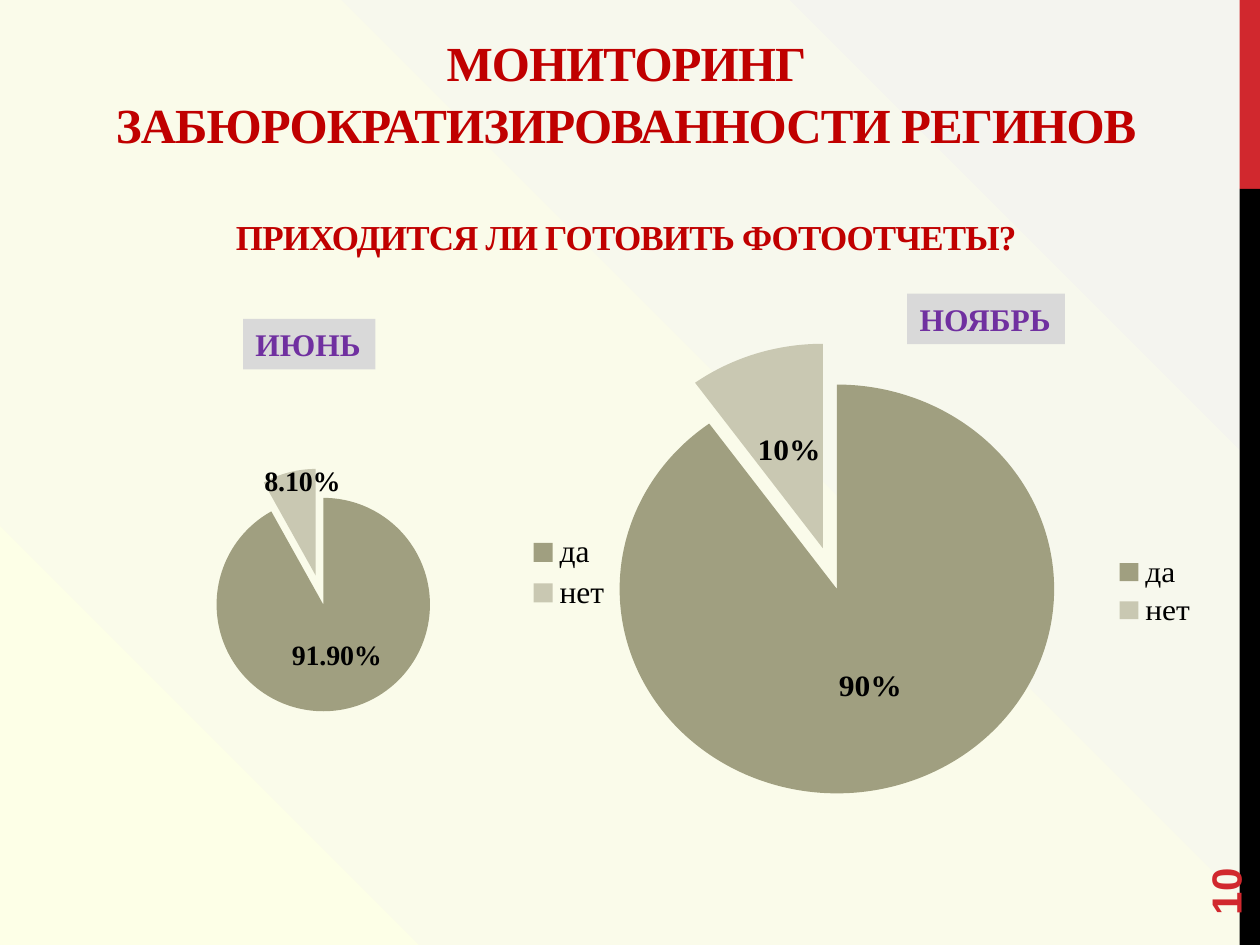
from dataclasses import dataclass

from lxml import etree
from pptx import Presentation
from pptx.chart.data import CategoryChartData
from pptx.dml.color import RGBColor
from pptx.enum.chart import XL_CHART_TYPE, XL_LABEL_POSITION, XL_LEGEND_POSITION
from pptx.enum.shapes import MSO_SHAPE
from pptx.enum.text import MSO_ANCHOR, PP_ALIGN
from pptx.oxml import parse_xml
from pptx.oxml.ns import nsdecls, qn
from pptx.util import Cm, Pt

PIE = XL_CHART_TYPE.PIE
LABEL_CENTER = XL_LABEL_POSITION.CENTER
LEGEND_RIGHT = XL_LEGEND_POSITION.RIGHT
RECTANGLE = MSO_SHAPE.RECTANGLE
MIDDLE, BOTTOM = MSO_ANCHOR.MIDDLE, MSO_ANCHOR.BOTTOM
LEFT, CENTER = PP_ALIGN.LEFT, PP_ALIGN.CENTER


@dataclass(frozen=True)
class Theme:
    serif: str = "Times New Roman"
    sans: str = "Arial"
    red: str = "D1282E"
    black: str = "000000"
    heading: str = "C00000"
    badge: str = "D9D9D9"
    month: str = "7030A0"
    slices: tuple = ("A09F80", "C9C8B2")
    backdrop: tuple = ((0, "FDFFE7"), (38, "FAFBEA"), (99, "F4F4EF"))
    title_size: int = 28
    question_size: int = 20
    page_size: int = 24
    body_size: int = 18
    small_size: int = 16


@dataclass(frozen=True)
class Box:
    left: float
    top: float
    width: float
    height: float

    def lengths(self) -> tuple:
        return Cm(self.left), Cm(self.top), Cm(self.width), Cm(self.height)


@dataclass(frozen=True)
class Survey:
    month: str
    badge: Box
    frame: Box
    plot: Box  # fractions of the chart frame
    shares: tuple
    number_format: str
    label_size: int
    explosion: int
    explode_all: bool = False
    small_label_shift: float = 0


THEME = Theme()
ANSWERS = ("да", "нет")
SURVEYS = (
    Survey("ИЮНЬ", Box(4.9, 6.43, 2.67, 1.02), Box(1.7, 8.33, 10.9, 6.43),
           Box(0.21, 0.17, 0.45, 0.77), (0.919, 0.081), "0.00%",
           THEME.small_size, 14, explode_all=True, small_label_shift=-0.13),
    Survey("НОЯБРЬ", Box(18.29, 5.92, 3.18, 1.02), Box(11.3, 6.93, 13.11, 9.42),
           Box(0.09, 0.03, 0.67, 0.93), (0.9, 0.1), "0%",
           THEME.body_size, 21),
)


def rgb(color: str) -> RGBColor:
    return RGBColor.from_string(color)


def style_font(font, size: int, color: str, bold: bool, name: str) -> None:
    font.size, font.bold, font.name = Pt(size), bold, name
    font.color.rgb = rgb(color)


def write(frame, text: str, *, size: int, color: str, bold: bool = True,
          name: str = THEME.serif, align=LEFT, tracking: float = 0,
          before: float = 0, spacing: float = 1, append: bool = False) -> None:
    paragraph = frame.add_paragraph() if append else frame.paragraphs[0]
    paragraph.alignment = align
    paragraph.space_before, paragraph.line_spacing = Pt(before), spacing
    run = paragraph.add_run()
    run.text = text
    style_font(run.font, size, color, bold, name)
    if tracking:
        run.font._element.set("spc", str(round(tracking * 100)))


def add_panel(slide, box: Box, color: str):
    panel = slide.shapes.add_shape(RECTANGLE, *box.lengths())
    panel.shadow.inherit = False
    panel.fill.solid()
    panel.fill.fore_color.rgb = rgb(color)
    panel.line.fill.background()
    return panel


def add_text_area(slide, box: Box, anchor):
    area = slide.shapes.add_textbox(*box.lengths())
    area.text_frame.word_wrap = True
    area.text_frame.vertical_anchor = anchor
    return area


def set_backdrop(slide) -> None:
    stops = "".join(f'<a:gs pos="{pos * 1000}"><a:srgbClr val="{color}"/></a:gs>'
                    for pos, color in THEME.backdrop)
    slide._element.cSld.insert(0, parse_xml(
        f'<p:bg {nsdecls("p", "a")}><p:bgPr><a:gradFill rotWithShape="1">'
        f'<a:gsLst>{stops}</a:gsLst><a:path path="circle">'
        '<a:fillToRect t="100000" r="100000"/></a:path></a:gradFill>'
        '<a:effectLst/></p:bgPr></p:bg>'))


def manual_layout(**values) -> etree._Element:
    entries = "".join(f'<c:{key} val="{value}"/>' for key, value in values.items())
    return parse_xml(f'<c:layout {nsdecls("c")}><c:manualLayout>{entries}'
                     '</c:manualLayout></c:layout>')


def explode(parent, percent: int, after: str) -> None:
    explosion = etree.Element(qn("c:explosion"), val=str(percent))
    parent.find(qn(after)).addnext(explosion)


def add_pie(slide, survey: Survey) -> None:
    data = CategoryChartData(number_format=survey.number_format)
    data.categories = ANSWERS
    data.add_series("Series 1", survey.shares)
    chart = slide.shapes.add_chart(PIE, *survey.frame.lengths(), data).chart
    chart.has_title = False
    style_font(chart.font, THEME.body_size, THEME.black, False, THEME.serif)

    # Legend
    chart.has_legend = True
    chart.legend.position = LEGEND_RIGHT
    chart.legend.include_in_layout = False
    style_font(chart.legend.font, THEME.body_size, THEME.black, False, THEME.serif)

    # Slices
    pie = chart.plots[0]
    pie.vary_by_categories = True
    series = pie.series[0]
    series.format.fill.solid()
    series.format.fill.fore_color.rgb = rgb(THEME.slices[0])
    for index, color in enumerate(THEME.slices):
        fill = series.points[index].format.fill
        fill.solid()
        fill.fore_color.rgb = rgb(color)
    if survey.explode_all:
        explode(series._element, survey.explosion, "c:spPr")
    no_slice = series._element.findall(qn("c:dPt"))[1]
    explode(no_slice, survey.explosion, "c:idx")

    # Value labels
    labels = series.data_labels
    labels.show_value, labels.show_percentage = True, False
    labels.number_format = survey.number_format
    labels.number_format_is_linked = False
    labels.position = LABEL_CENTER
    style_font(labels.font, survey.label_size, THEME.black, True, THEME.serif)
    if survey.small_label_shift:
        label = series.points[1].data_label
        style_font(label.font, survey.label_size, THEME.black, True, THEME.serif)
        label.position = LABEL_CENTER
        series._element.find(".//" + qn("c:dLbl")).find(qn("c:idx")).addnext(
            manual_layout(x=0, y=survey.small_label_shift))

    # Plot position
    plot_area = chart._chartSpace.chart.plotArea
    for layout in plot_area.findall(qn("c:layout")):
        plot_area.remove(layout)
    plot = survey.plot
    plot_area.insert(0, manual_layout(
        layoutTarget="inner", xMode="edge", yMode="edge",
        x=plot.left, y=plot.top, w=plot.width, h=plot.height))


def add_month(slide, survey: Survey) -> None:
    frame = add_panel(slide, survey.badge, THEME.badge).text_frame
    frame.word_wrap = False
    write(frame, survey.month, size=THEME.body_size, color=THEME.month)


def main() -> None:
    deck = Presentation()
    deck.slide_width, deck.slide_height = Cm(25.4), Cm(19.05)
    slide = deck.slides.add_slide(deck.slide_layouts[6])

    # Background and side stripe
    set_backdrop(slide)
    add_panel(slide, Box(24.99, 0, 0.41, 3.81), THEME.red)
    add_panel(slide, Box(24.99, 3.81, 0.41, 15.24), THEME.black)

    # Title and question
    heading = add_text_area(slide, Box(1.19, 1.12, 22.86, 4.19), BOTTOM).text_frame
    heading_format = dict(color=THEME.heading, align=CENTER, tracking=-0.5, spacing=1.05)
    write(heading, "МОНИТОРИНГ ЗАБЮРОКРАТИЗИРОВАННОСТИ РЕГИНОВ",
          size=THEME.title_size, **heading_format)
    write(heading, "ПРИХОДИТСЯ ЛИ ГОТОВИТЬ ФОТООТЧЕТЫ?", size=THEME.question_size,
          before=34, append=True, **heading_format)

    # Page number
    page = add_text_area(slide, Box(22.86, 16.36, 3.66, 1.02), MIDDLE)
    page.rotation = 270
    write(page.text_frame, "10", size=THEME.page_size, color=THEME.red, name=THEME.sans)

    # Survey results
    for survey in SURVEYS:
        add_pie(slide, survey)
    for survey in SURVEYS:
        add_month(slide, survey)

    deck.save("out.pptx")


if __name__ == "__main__":
    main()
